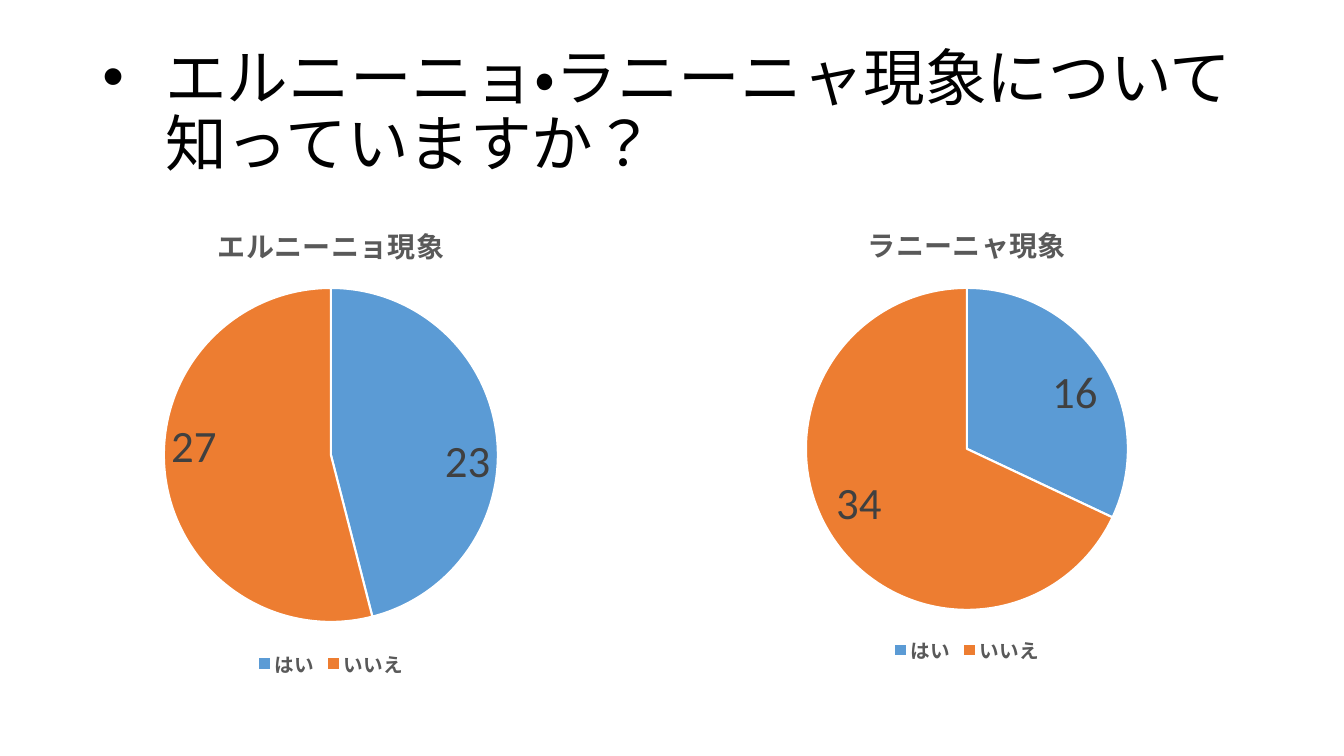
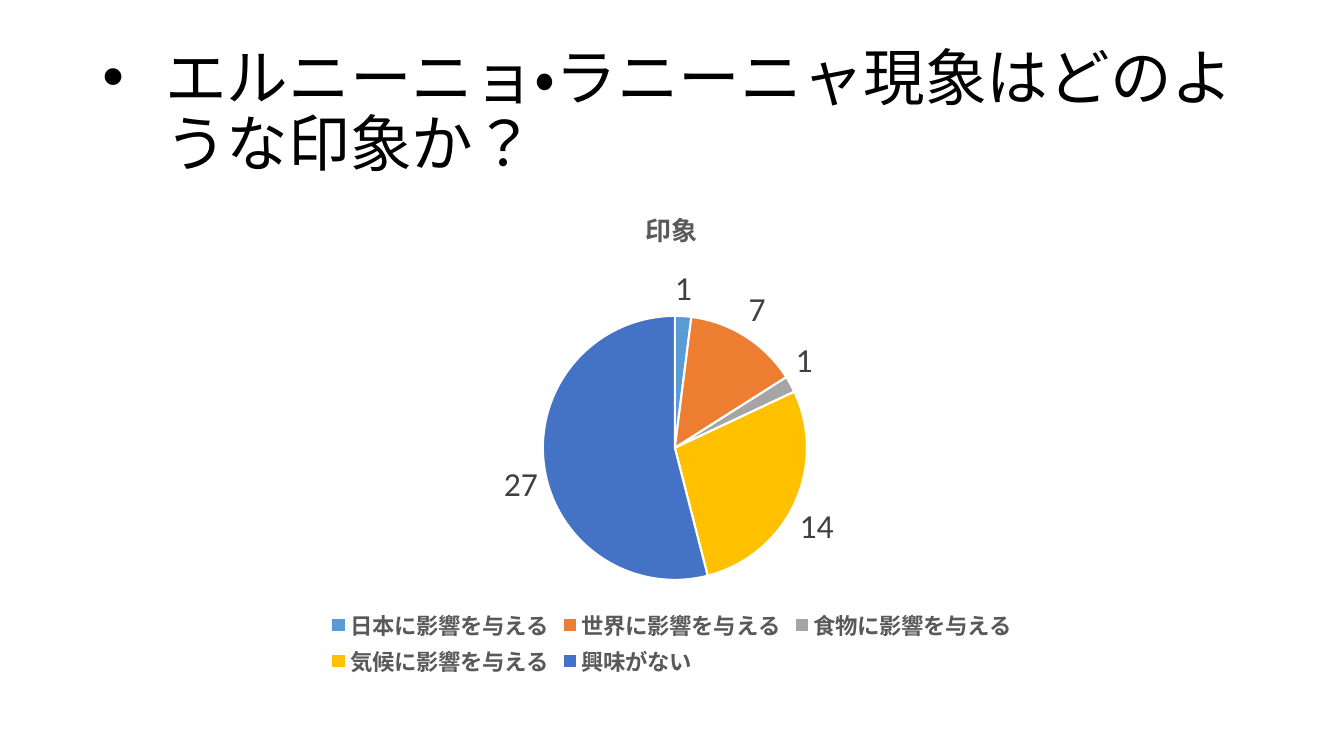
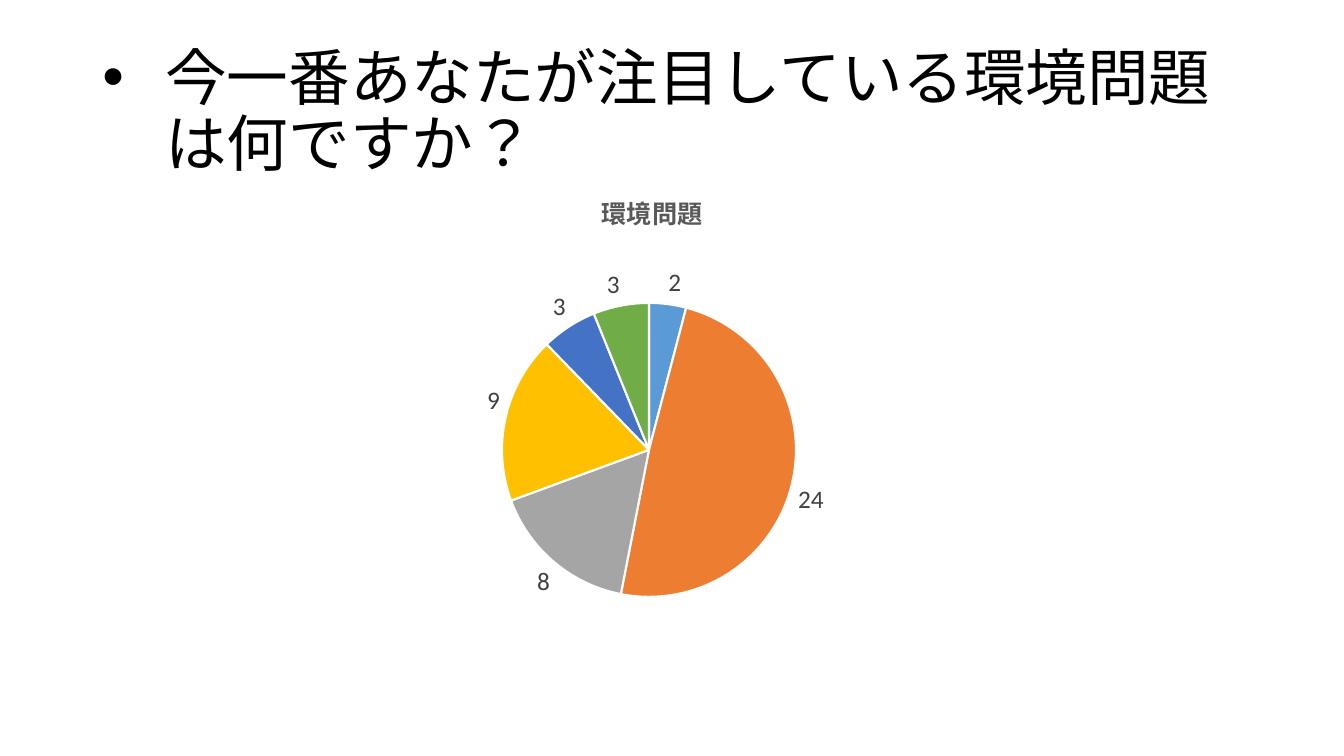
"""Build three survey slides with pie charts."""
from lxml import etree
from pptx import Presentation
from pptx.chart.data import CategoryChartData
from pptx.dml.color import RGBColor
from pptx.enum.chart import XL_CHART_TYPE, XL_LABEL_POSITION, XL_LEGEND_POSITION
from pptx.enum.lang import MSO_LANGUAGE_ID
from pptx.enum.text import MSO_ANCHOR
from pptx.oxml.ns import qn
from pptx.util import Pt

PIE = XL_CHART_TYPE.PIE
INSIDE = XL_LABEL_POSITION.INSIDE_END
OUTSIDE = XL_LABEL_POSITION.OUTSIDE_END
BOTTOM = XL_LEGEND_POSITION.BOTTOM
MIDDLE = MSO_ANCHOR.MIDDLE
JAPANESE = MSO_LANGUAGE_ID.JAPANESE

FONT = "Calibri"
BLACK, WHITE, GREY, DARK = "000000", "FFFFFF", "595959", "404040"
PALETTE = ["5B9BD5", "ED7D31", "A5A5A5", "FFC000", "4472C4", "70AD47"]
YES_NO = ["はい", "いいえ"]
IMPRESSIONS = ["日本に影響を与える", "世界に影響を与える", "食物に影響を与える",
               "気候に影響を与える", "興味がない"]
UNNAMED = [""] * 6


def rgb(color):
    """Turn a hex string into a colour."""
    return RGBColor.from_string(color)


def set_font(font, size, color, bold=False):
    """Apply the shared typeface with a size and colour."""
    font.name = FONT
    font.size = Pt(size)
    font.bold = bold
    font.color.rgb = rgb(color)


def add_slide(prs, title):
    """Add a blank slide with a bulleted question as its title."""
    s = prs.slides.add_slide(prs.slide_layouts[6])
    tf = s.shapes.add_textbox(Pt(66), Pt(28.8), Pt(828), Pt(104.4)).text_frame
    tf.word_wrap = True
    tf.vertical_anchor = MIDDLE
    p = tf.paragraphs[0]
    p.text = title
    p.line_spacing = 0.9
    set_font(p.font, 44, BLACK)
    p.runs[0].font.language_id = JAPANESE
    pPr = p._p.get_or_add_pPr()
    pPr.set("marL", str(Pt(45)))
    pPr.set("indent", str(-Pt(45)))
    font = etree.Element(qn("a:buFont"), typeface="Arial")
    bullet = etree.Element(qn("a:buChar"), char="•")
    defaults = pPr.find(qn("a:defRPr"))
    defaults.addprevious(font)
    defaults.addprevious(bullet)
    return s


def manual_layout(**settings):
    """Make a layout element measured from the chart's edges."""
    layout = etree.Element(qn("c:layout"))
    manual = etree.SubElement(layout, qn("c:manualLayout"))
    for name, value in settings.items():
        etree.SubElement(manual, qn(f"c:{name}"), val=str(value))
    return layout


def set_layout(parent, index, layout):
    """Replace the layout of a chart part."""
    for old in parent.findall(qn("c:layout")):
        parent.remove(old)
    parent.insert(index, layout)


def place_pie(chart, box, center, diameter):
    """Fix the pie's place as fractions of the chart's box."""
    left, top, width, height = box
    area = chart.element.find(qn("c:chart")).find(qn("c:plotArea"))
    set_layout(area, 0, manual_layout(
        layoutTarget="inner", xMode="edge", yMode="edge",
        x=(center[0] - diameter / 2 - left) / width,
        y=(center[1] - diameter / 2 - top) / height,
        w=diameter / width, h=diameter / height))


def add_pie(s, box, title, title_size, cats, values, label_size, position,
            center, diameter, legend_size=None):
    """Add a titled pie chart, with a legend if it has a size."""
    data = CategoryChartData()
    data.categories = cats
    data.add_series(title, values)
    chart = s.shapes.add_chart(PIE, *map(Pt, box), data).chart
    set_font(chart.font, 10, BLACK)

    chart.has_title = True
    tf = chart.chart_title.text_frame
    tf.text = title
    set_font(tf.paragraphs[0].font, title_size, GREY, True)

    chart.has_legend = legend_size is not None
    if chart.has_legend:
        chart.legend.position = BOTTOM
        chart.legend.include_in_layout = False
        set_font(chart.legend.font, legend_size, GREY, True)

    plot = chart.plots[0]
    plot.vary_by_categories = True
    plot.has_data_labels = True
    labels = plot.data_labels
    labels.show_value = True
    labels.show_percentage = False
    labels.position = position
    set_font(labels.font, label_size, DARK)
    for i, color in enumerate(PALETTE[:len(values)]):
        fmt = plot.series[0].points[i].format
        fmt.fill.solid()
        fmt.fill.fore_color.rgb = rgb(color)
        fmt.line.color.rgb = rgb(WHITE)
        fmt.line.width = Pt(1.5)
    place_pie(chart, box, center, diameter)
    return chart


def main():
    """Build and save the presentation."""
    prs = Presentation()
    prs.slide_width, prs.slide_height = Pt(960), Pt(540)

    s = add_slide(prs, "エルニーニョ・ラニーニャ現象について知っていますか？")
    add_pie(s, (66, 144, 341.3, 342.7), "エルニーニョ現象", 20, YES_NO,
            (23, 27), 32, INSIDE, (236.4, 325), 238.6, 14)
    add_pie(s, (496, 143.3, 389.5, 334), "ラニーニャ現象", 20, YES_NO,
            (16, 34), 32, INSIDE, (690.7, 320.7), 230, 14)

    s = add_slide(prs, "エルニーニョ・ラニーニャ現象はどのような印象か？")
    add_pie(s, (66, 133.2, 828, 353.5), "印象", 18.6, IMPRESSIONS,
            (1, 7, 1, 14, 27), 24, OUTSIDE, (482.1, 320), 188.6, 16)

    s = add_slide(prs, "今一番あなたが注目している環境問題は何ですか？")
    chart = add_pie(s, (54, 133.2, 828, 353.5), "環境問題", 18, UNNAMED,
                    (2, 24, 8, 9, 3, 3), 18, OUTSIDE, (463.6, 321.4), 210)
    set_layout(chart.chart_title.element, 1,
               manual_layout(xMode="edge", yMode="edge", x=0.45, y=0))

    prs.save("out.pptx")


if __name__ == "__main__":
    main()
